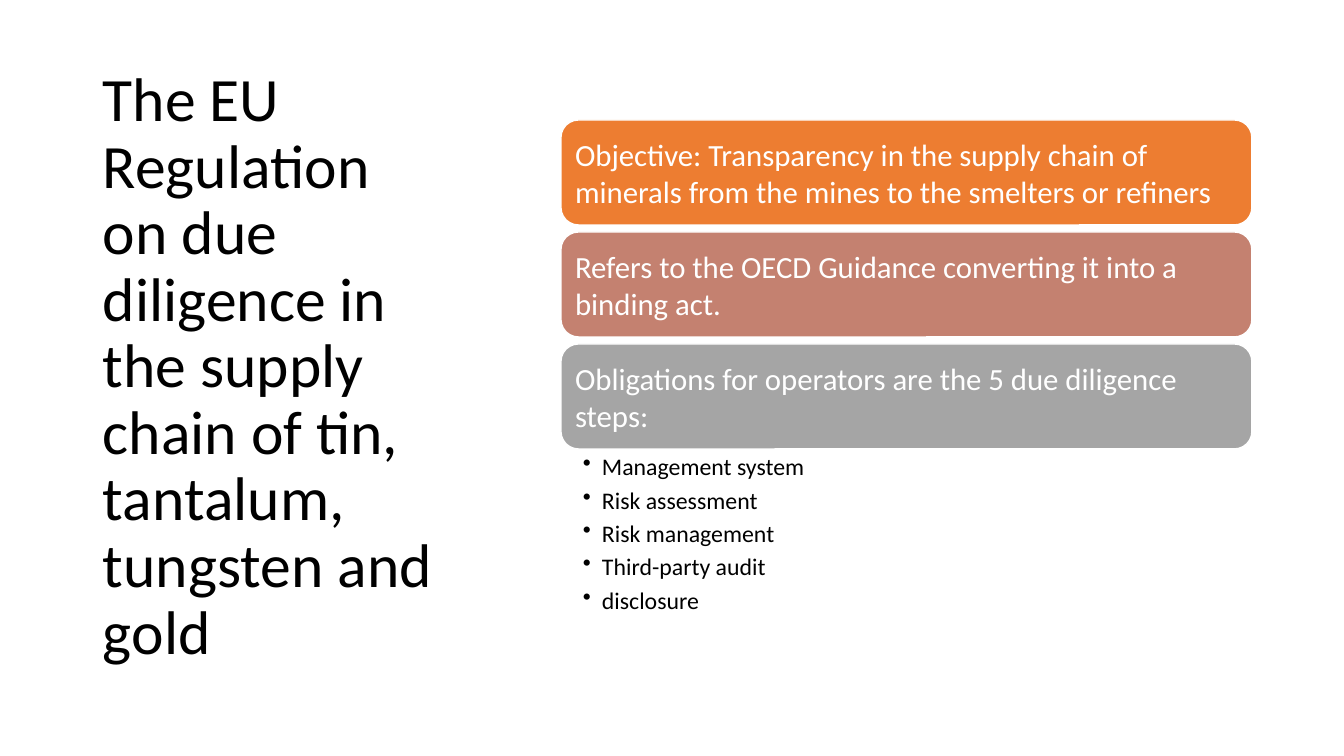
"""Build the slide on the EU Regulation for mineral supply chains."""
from dataclasses import dataclass

from lxml import etree
from pptx import Presentation
from pptx.dml.color import RGBColor
from pptx.enum.shapes import MSO_SHAPE
from pptx.enum.text import MSO_ANCHOR, MSO_AUTO_SIZE, PP_ALIGN
from pptx.oxml.ns import qn
from pptx.util import Pt

ROUNDED = MSO_SHAPE.ROUNDED_RECTANGLE
MIDDLE, TOP = MSO_ANCHOR.MIDDLE, MSO_ANCHOR.TOP
LEFT = PP_ALIGN.LEFT
NO_FIT = MSO_AUTO_SIZE.NONE

TITLE = [
    "The EU Regulation",
    "on due diligence in the supply chain of tin, tantalum, tungsten and gold",
]
CARDS = [
    ("Objective: Transparency in the supply chain of minerals from the mines "
     "to the smelters or refiners", "ED7D31"),
    ("Refers to the OECD Guidance converting it into a binding act.", "C48170"),
    ("Obligations for operators are the 5 due diligence steps:", "A5A5A5"),
]
STEPS = ["Management system", "Risk assessment", "Risk management",
         "Third-party audit", "disclosure"]

SLIDE_W, SLIDE_H = 1344, 756
TITLE_BOX = (93, 61, 372, 614)
CARD_X, CARD_Y, CARD_W, CARD_H, CARD_STEP = 561, 120, 691, 105, 112
STEPS_H = 175
BULLET_INDENT = 19


@dataclass(frozen=True)
class Theme:
    """Colours, font and type sizes."""
    font: str = "Calibri"
    ink: str = "000000"
    paper: str = "FFFFFF"
    title: int = 44
    card: int = 22
    step: int = 17


THEME = Theme()


def px(n):
    """Turn slide pixels into EMU."""
    return round(n * 914400 / 100.8)


def add_run(p, text, size, color):
    """Add one formatted run to a paragraph."""
    r = p.add_run()
    r.text = text
    r.font.name = THEME.font
    r.font.size = Pt(size)
    r.font.color.rgb = RGBColor.from_string(color)


def set_frame(tf, anchor, left, top, right, bottom):
    """Set wrapping, anchor and insets of a text frame."""
    tf.word_wrap = True
    tf.auto_size = NO_FIT
    tf.vertical_anchor = anchor
    tf.margin_left, tf.margin_top = px(left), px(top)
    tf.margin_right, tf.margin_bottom = px(right), px(bottom)


def add_title(s):
    """Place and fill the title placeholder."""
    sp = s.shapes.title
    sp.left, sp.top, sp.width, sp.height = map(px, TITLE_BOX)
    set_frame(sp.text_frame, MIDDLE, 10, 5, 10, 5)
    p = sp.text_frame.paragraphs[0]
    p.alignment = LEFT
    p.line_spacing = 0.9
    for i, line in enumerate(TITLE):
        if i:
            p.add_line_break()
        add_run(p, line, THEME.title, THEME.ink)


def add_card(s, y, text, color):
    """Add one rounded card with its text."""
    sp = s.shapes.add_shape(ROUNDED, px(CARD_X), px(y), px(CARD_W), px(CARD_H))
    sp.shadow.inherit = False
    sp.fill.solid()
    sp.fill.fore_color.rgb = RGBColor.from_string(color)
    sp.line.color.rgb = RGBColor.from_string(THEME.paper)
    sp.line.width = Pt(1)
    set_frame(sp.text_frame, MIDDLE, 9, 9, 9, 9)
    p = sp.text_frame.paragraphs[0]
    p.alignment = LEFT
    add_run(p, text, THEME.card, THEME.paper)


def add_steps(s, y):
    """Add the bulleted due diligence steps."""
    sp = s.shapes.add_textbox(px(CARD_X), px(y), px(CARD_W), px(STEPS_H))
    tf = sp.text_frame
    set_frame(tf, TOP, 22, 3, 17, 3)
    for i, step in enumerate(STEPS):
        p = tf.add_paragraph() if i else tf.paragraphs[0]
        p.level = 1
        p.alignment = LEFT
        p.space_after = Pt(THEME.step * 0.2)
        pPr = p._p.get_or_add_pPr()
        pPr.set("marL", str(px(BULLET_INDENT)))
        pPr.set("indent", str(-px(BULLET_INDENT)))
        etree.SubElement(pPr, qn("a:buChar"), char="•")
        add_run(p, step, THEME.step, THEME.ink)


def main():
    """Build and save the deck."""
    prs = Presentation()
    prs.slide_width, prs.slide_height = px(SLIDE_W), px(SLIDE_H)
    s = prs.slides.add_slide(prs.slide_layouts[5])
    add_title(s)
    for i, (text, color) in enumerate(CARDS):
        add_card(s, CARD_Y + i * CARD_STEP, text, color)
    add_steps(s, CARD_Y + (len(CARDS) - 1) * CARD_STEP + CARD_H)
    prs.save("out.pptx")


if __name__ == "__main__":
    main()
